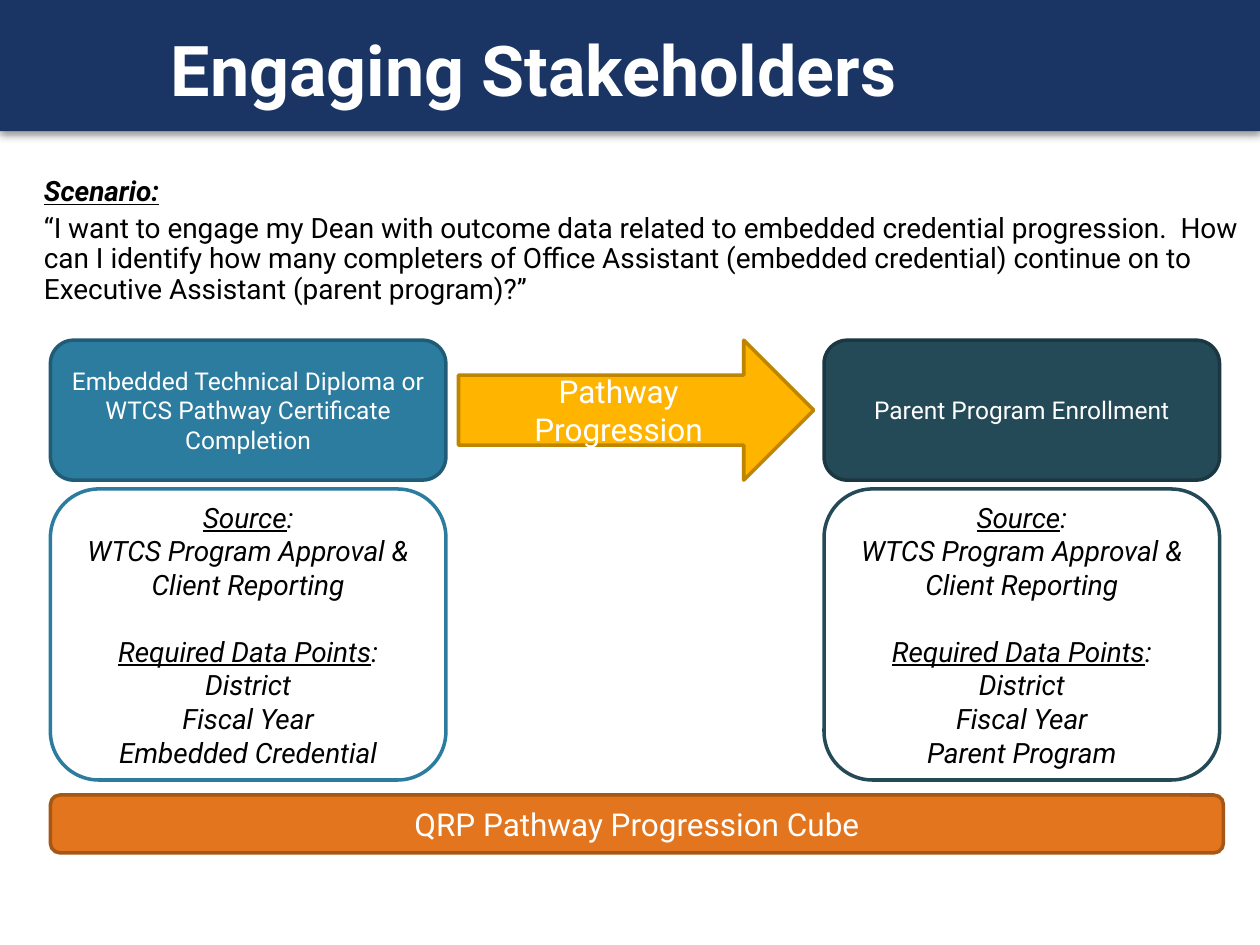
from dataclasses import dataclass

from lxml.etree import SubElement
from pptx import Presentation
from pptx.dml.color import RGBColor
from pptx.enum.shapes import MSO_SHAPE
from pptx.enum.text import MSO_ANCHOR, MSO_AUTO_SIZE, PP_ALIGN
from pptx.oxml.ns import qn
from pptx.shapes.autoshape import Shape
from pptx.slide import Slide
from pptx.text.text import Font
from pptx.util import Pt

FONT = "Roboto"
COLORS = {
    "white": "FFFFFF", "black": "000000", "navy": "1A3564",
    "blue": "2C7C9F", "blue_edge": "215C76",
    "teal": "244A58", "teal_edge": "1B3741",
    "gold": "FFB400", "gold_edge": "BD8500",
    "orange": "E2751D", "orange_edge": "A75715",
}
LEFT, STAGE_TOP, STAGE_WIDTH, STAGE_HEIGHT = 28.8, 194.4, 226, 80
CARD_TOP, CARD_HEIGHT = 279.4, 166.3
PARENT_LEFT = 470.9


@dataclass
class Block:
    """A filled, outlined shape with centred text."""
    text: str
    left: float
    top: float
    width: float
    height: float
    fill: str
    edge: str
    size: float
    preset: MSO_SHAPE = MSO_SHAPE.ROUNDED_RECTANGLE


@dataclass
class Stage:
    """A pathway stage with its data requirements."""
    heading: str
    left: float
    color: str
    last_point: str


STAGES = [
    Stage("Embedded Technical Diploma or WTCS Pathway Certificate Completion",
          LEFT, "blue", "Embedded Credential"),
    Stage("Parent Program Enrollment", PARENT_LEFT, "teal", "Parent Program"),
]


def rgb(name: str) -> RGBColor:
    """Return a named colour."""
    return RGBColor.from_string(COLORS[name])


def style(font: Font, size: float, color: str, bold: bool = False,
          italic: bool = False, underline: bool = False) -> None:
    """Format a run's font."""
    font.name, font.size = FONT, Pt(size)
    font.bold, font.italic, font.underline = bold, italic, underline
    font.color.rgb = rgb(color)


def add_block(slide: Slide, block: Block) -> Shape:
    """Draw a block with plain centred text."""
    shape = slide.shapes.add_shape(block.preset, Pt(block.left), Pt(block.top),
                                   Pt(block.width), Pt(block.height))
    shape.shadow.inherit = False
    shape.fill.solid()
    shape.fill.fore_color.rgb = rgb(block.fill)
    shape.line.color.rgb = rgb(block.edge)
    shape.line.width = Pt(2)
    frame = shape.text_frame
    frame.word_wrap = True
    frame.vertical_anchor = MSO_ANCHOR.MIDDLE
    frame.text = block.text
    for paragraph in frame.paragraphs:
        paragraph.alignment = PP_ALIGN.CENTER
        for run in paragraph.runs:
            style(run.font, block.size, "white")
    return shape


def add_stage(slide: Slide, stage: Stage) -> None:
    """Draw a stage heading and the card of sources and data points."""
    lines = ["Source", "WTCS Program Approval & Client Reporting",
             "Required Data Points", "District", "Fiscal Year", stage.last_point]
    card = add_block(slide, Block("\n".join(lines), stage.left, CARD_TOP, STAGE_WIDTH,
                                  CARD_HEIGHT, "white", stage.color, 16))
    for paragraph in card.text_frame.paragraphs:
        is_label = paragraph.text in ("Source", "Required Data Points")
        style(paragraph.runs[0].font, 16, "black", italic=True, underline=is_label)
        if is_label:
            colon = paragraph.add_run()
            colon.text = ":"
            style(colon.font, 16, "black", italic=True)
    card.text_frame.paragraphs[2].space_before = Pt(19)
    add_block(slide, Block(stage.heading, stage.left, STAGE_TOP, STAGE_WIDTH, STAGE_HEIGHT,
                           stage.color, f"{stage.color}_edge", 14))


def add_banner(slide: Slide) -> None:
    """Draw the shadowed title band behind everything else."""
    banner = slide.shapes.add_shape(MSO_SHAPE.RECTANGLE, Pt(0), Pt(-2), Pt(720), Pt(77))
    banner.fill.solid()
    banner.fill.fore_color.rgb = rgb("navy")
    banner.line.fill.background()
    banner.shadow.inherit = False
    effects = banner._element.spPr.find(qn("a:effectLst"))
    shadow = SubElement(effects, qn("a:outerShdw"), blurRad=str(Pt(5)), dist=str(Pt(2)),
                        dir="5400000", rotWithShape="0")
    shade = SubElement(shadow, qn("a:srgbClr"), val=COLORS["black"])
    SubElement(shade, qn("a:alpha"), val="40000")
    slide.shapes._spTree.insert(2, banner._element)


def add_title(slide: Slide) -> None:
    """Place and format the title."""
    title = slide.shapes.title
    title.left, title.top, title.width, title.height = Pt(43.2), Pt(9), Pt(523.4), Pt(57.6)
    frame = title.text_frame
    frame.text = "Engaging Stakeholders"
    frame.auto_size = MSO_AUTO_SIZE.NONE
    frame.vertical_anchor = MSO_ANCHOR.BOTTOM
    frame.paragraphs[0].alignment = PP_ALIGN.CENTER
    style(frame.paragraphs[0].runs[0].font, 40, "white", bold=True)


def add_scenario(slide: Slide) -> None:
    """Write the scenario and its question."""
    scenario = slide.shapes.add_textbox(Pt(18), Pt(98), Pt(702), Pt(80)).text_frame
    scenario.word_wrap = True
    scenario.text = (
        "Scenario:\n“I want to engage my Dean with outcome data related to embedded "
        "credential progression.  How can I identify how many completers of Office Assistant "
        "(embedded credential) continue on to Executive Assistant (parent program)?”")
    label, question = scenario.paragraphs
    for paragraph in (label, question):
        paragraph.line_spacing = 0.9
    question.space_before = Pt(3.8)
    style(label.runs[0].font, 16, "black", bold=True, italic=True, underline=True)
    style(question.runs[0].font, 16, "black")


def main() -> None:
    """Build and save the slide."""
    presentation = Presentation()
    presentation.slide_width, presentation.slide_height = Pt(720), Pt(540)
    slide = presentation.slides.add_slide(presentation.slide_layouts[5])
    add_banner(slide)
    add_title(slide)
    add_scenario(slide)
    for stage in STAGES:
        add_stage(slide, stage)
    add_block(slide, Block("Pathway Progression", 262, STAGE_TOP, 203, STAGE_HEIGHT,
                           "gold", "gold_edge", 18, MSO_SHAPE.RIGHT_ARROW))
    add_block(slide, Block("QRP Pathway Progression Cube", LEFT, 454.3, 670.3, 33.1,
                           "orange", "orange_edge", 18))
    presentation.save("out.pptx")


if __name__ == "__main__":
    main()
